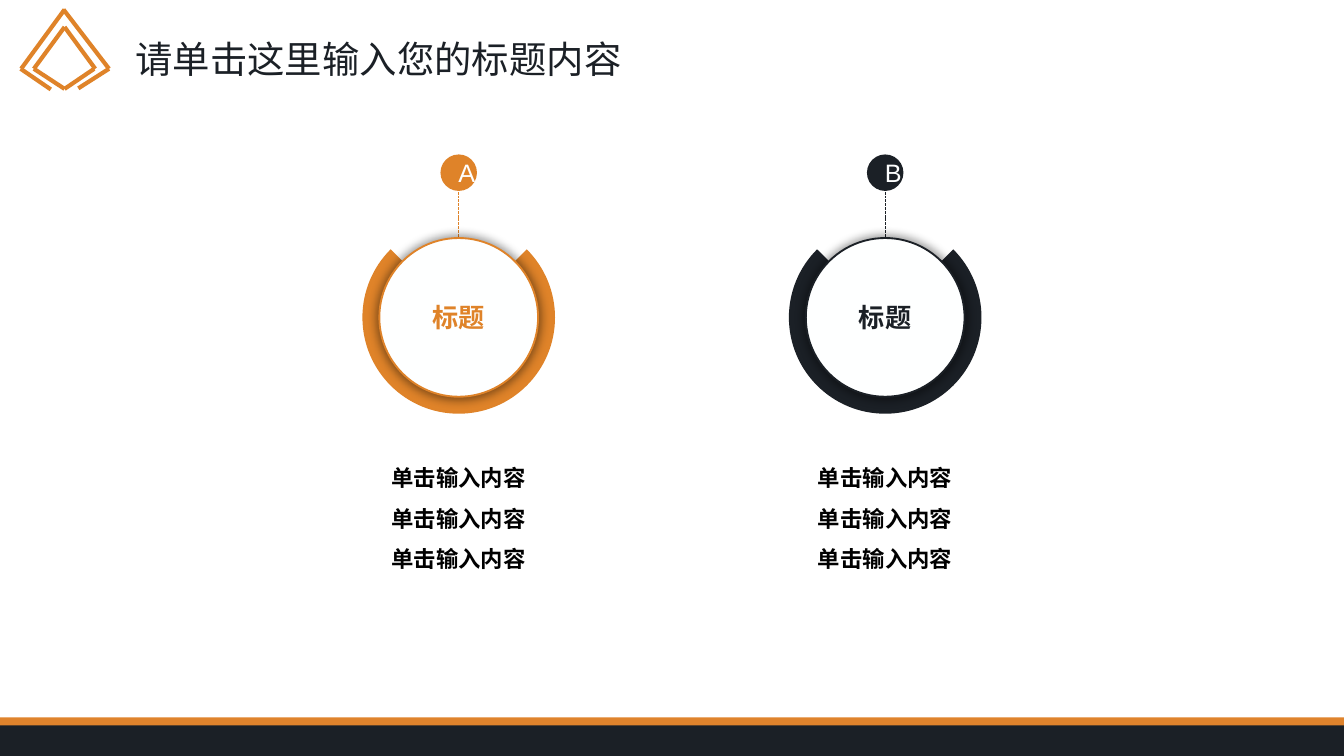
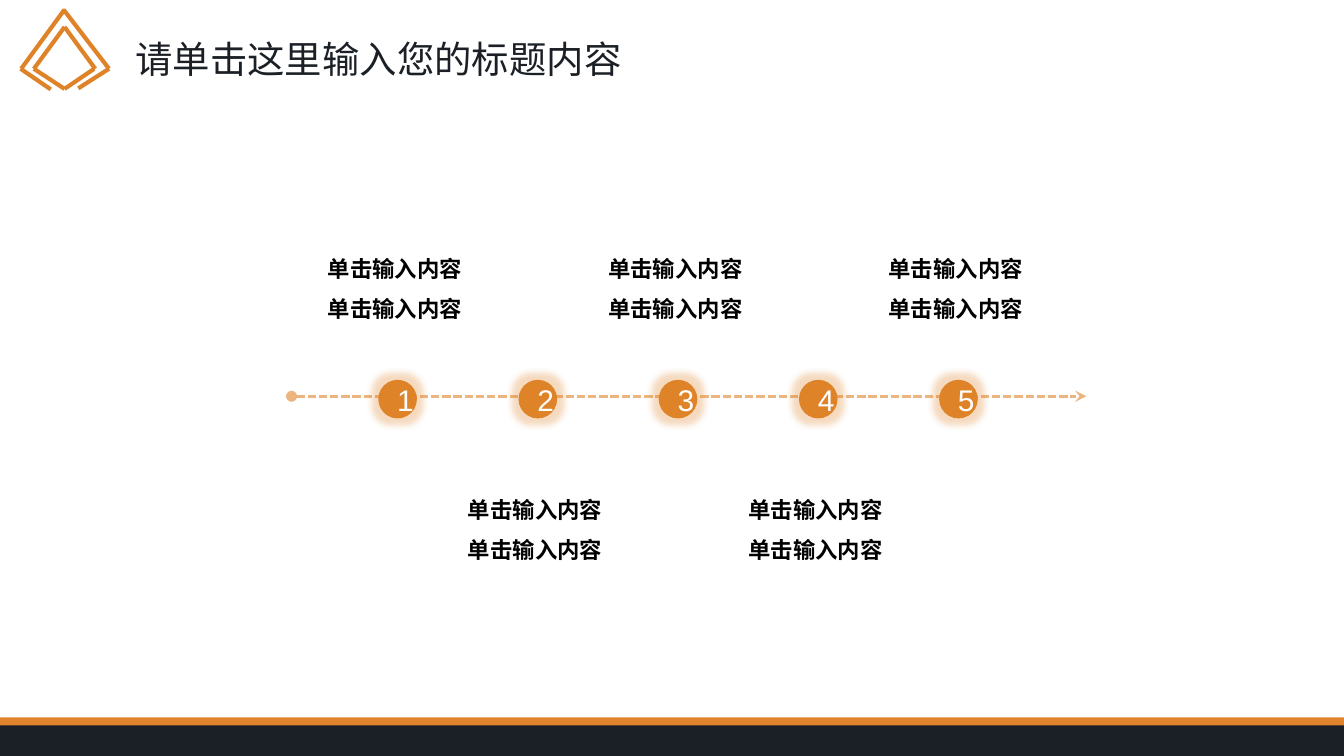
from math import cos, radians, sin, tan

from lxml import etree
from pptx import Presentation
from pptx.dml.color import RGBColor
from pptx.enum.dml import MSO_LINE
from pptx.enum.shapes import MSO_CONNECTOR, MSO_SHAPE
from pptx.enum.text import MSO_ANCHOR, MSO_AUTO_SIZE, PP_ALIGN
from pptx.oxml import parse_xml
from pptx.oxml.ns import nsdecls, qn
from pptx.util import Cm, Pt

SYS_DASH = MSO_LINE.SQUARE_DOT
STRAIGHT = MSO_CONNECTOR.STRAIGHT
RECTANGLE = MSO_SHAPE.RECTANGLE
OVAL = MSO_SHAPE.OVAL
MIDDLE = MSO_ANCHOR.MIDDLE
GROW = MSO_AUTO_SIZE.SHAPE_TO_FIT_TEXT
LEFT, CENTER = PP_ALIGN.LEFT, PP_ALIGN.CENTER

FONT = "Arial"
COLORS = {
    "orange": "DF8329",
    "band": "DF832C",
    "navy": "1B2026",
    "pale": "ECB57F",
    "off_white": "FEFFFF",
    "white": "FFFFFF",
    "black": "000000",
}
RGB = {name: RGBColor.from_string(value) for name, value in COLORS.items()}

TITLE = "请单击这里输入您的标题内容"
ENTRY = "单击输入内容"


def add_line(shapes, start, end, color, width):
    """Draw a shadowless straight line between two points given in cm."""
    line = shapes.add_connector(STRAIGHT, *map(Cm, start + end))
    line.line.color.rgb = RGB[color]
    line.line.width = Pt(width)
    etree.SubElement(line._element.spPr, qn("a:effectLst"))
    return line


def write(shape, lines, size, color, bold=False, align=CENTER, spacing=None):
    """Fill a shape with one paragraph per line."""
    frame = shape.text_frame
    frame.word_wrap = True
    for index, text in enumerate(lines):
        paragraph = frame.add_paragraph() if index else frame.paragraphs[0]
        paragraph.alignment = align
        if spacing:
            paragraph.line_spacing = spacing
        run = paragraph.add_run()
        run.text = text
        run.font.name = FONT
        run.font.size = Pt(size)
        run.font.bold = bold
        run.font.color.rgb = RGB[color]


prs = Presentation()
prs.slide_width, prs.slide_height = Cm(25.4), Cm(14.29)
blank = prs.slide_layouts[6]
comparison, timeline = [prs.slides.add_slide(blank) for _ in range(2)]

# Shared by both slides: footer bands, emblem, title
emblem_lines = [
    ((1.22, 0.51), (0.64, 1.3)),
    ((1.22, 0.51), (1.8, 1.3)),
    ((1.22, 1.68), (0.64, 1.3)),
    ((1.22, 1.68), (1.78, 1.3)),
    ((1.22, 0.18), (0.4, 1.3)),
    ((1.2, 0.18), (2.06, 1.3)),
    ((0.96, 1.69), (0.39, 1.3)),
    ((1.48, 1.67), (2.06, 1.3)),
]
for slide in (comparison, timeline):
    footer = slide.shapes.add_group_shape()
    for top, color in ((13.56, "band"), (13.71, "navy")):
        band = footer.shapes.add_shape(RECTANGLE, 0, Cm(top), Cm(25.4), Cm(0.58))
        band.shadow.inherit = False
        band.fill.solid()
        band.fill.fore_color.rgb = RGB[color]
        band.line.fill.background()
    emblem = slide.shapes.add_group_shape()
    for start, end in emblem_lines:
        add_line(emblem.shapes, start, end, "orange", 2.25)
    title = slide.shapes.add_textbox(Cm(2.31), Cm(0.56), Cm(13.03), Cm(1.11))
    title.text_frame.auto_size = GROW
    write(title, [TITLE], 20, "navy", align=LEFT)

# Slide 1: two labelled rings
shapes = comparison.shapes
ring_y, ring_radius, core_radius = 6, 1.82, 1.5
badge_size = 0.69
ring_angles = [-45, 0, 90, 180, 225]
for letter, center_x, color in (("A", 8.67, "orange"), ("B", 16.73, "navy")):
    stem = add_line(shapes, (center_x, 3.41), (center_x, 4.5), color, 0.5)
    stem.line.dash_style = SYS_DASH

    # Three quarters of a disc, open at the top
    tips = [
        (Cm(center_x + ring_radius * cos(radians(angle))),
         Cm(ring_y + ring_radius * sin(radians(angle))))
        for angle in ring_angles
    ]
    outline = shapes.build_freeform(*tips[0])
    outline.add_line_segments(tips[1:] + [(Cm(center_x), Cm(ring_y))], close=True)
    ring = outline.convert_to_shape()

    # Bend the outer segments into quarter and eighth arcs
    segments = list(ring._element.iter(qn("a:lnTo")))
    for segment, first, last in zip(segments, ring_angles, ring_angles[1:]):
        handle = 4 / 3 * tan(radians(last - first) / 4)
        curve = etree.Element(qn("a:cubicBezTo"))
        for angle, pull in ((first, handle), (last, -handle), (last, 0)):
            turn = radians(angle)
            x = center_x + ring_radius * (cos(turn) - pull * sin(turn))
            y = ring_y + ring_radius * (sin(turn) + pull * cos(turn))
            etree.SubElement(curve, qn("a:pt"),
                             x=str(Cm(x) - ring.left), y=str(Cm(y) - ring.top))
        segment.getparent().replace(segment, curve)

    core = shapes.add_shape(OVAL, Cm(center_x - core_radius), Cm(ring_y - core_radius),
                            Cm(2 * core_radius), Cm(2 * core_radius))
    badge = shapes.add_shape(OVAL, Cm(center_x - badge_size / 2), Cm(2.92),
                             Cm(badge_size), Cm(badge_size))
    for part, fill in ((ring, color), (core, "off_white"), (badge, color)):
        part.shadow.inherit = False
        part.fill.solid()
        part.fill.fore_color.rgb = RGB[fill]
        part.line.fill.background()
    core.line.color.rgb = RGB[color]
    core.line.width = Pt(1)
    core._element.spPr.find(qn("a:effectLst")).append(parse_xml(
        f'<a:outerShdw {nsdecls("a")} blurRad="{Pt(5)}" dist="0" dir="0" '
        'sx="103000" sy="103000" algn="ctr" rotWithShape="0">'
        f'<a:srgbClr val="{COLORS["black"]}"><a:alpha val="40000"/>'
        '</a:srgbClr></a:outerShdw>'))
    for label, text, size, ink, bold in (
        (core, "标题", 14, color, True),
        (badge, letter, 13.5, "off_white", False),
    ):
        label.text_frame.vertical_anchor = MIDDLE
        write(label, [text], size, ink, bold)

    entries = shapes.add_textbox(Cm(center_x - ring_radius), Cm(8.4),
                                 Cm(2 * ring_radius), Cm(3.48))
    write(entries, [ENTRY] * 3, 12, "black", True, spacing=1.5)

# Slide 2: five steps along an arrow, texts alternating above and below
shapes = timeline.shapes
arrow = add_line(shapes, (5.51, 7.49), (20.53, 7.49), "pale", 1.5)
arrow.line.dash_style = SYS_DASH
arrow_ln = arrow._element.spPr.find(qn("a:ln"))
etree.SubElement(arrow_ln, qn("a:headEnd"), type="oval")
etree.SubElement(arrow_ln, qn("a:tailEnd"), type="stealth")

step_gap = 2.65
for index in range(5):
    offset = index * step_gap
    step = shapes.add_shape(OVAL, Cm(7.15 + offset), Cm(7.18), Cm(0.73), Cm(0.73))
    step.shadow.inherit = False
    step.fill.solid()
    step.fill.fore_color.rgb = RGB["orange"]
    step.line.fill.background()
    step._element.spPr.find(qn("a:effectLst")).append(parse_xml(
        f'<a:glow {nsdecls("a")} rad="{Pt(7)}"><a:srgbClr val="{COLORS["orange"]}">'
        '<a:alpha val="30000"/></a:srgbClr></a:glow>'))
    step.text_frame.vertical_anchor = MIDDLE
    write(step, [str(index + 1)], 16, "white")

    top = 8.26 if index % 2 else 3.7
    entries = shapes.add_textbox(Cm(5.6 + offset), Cm(top), Cm(3.73), Cm(3.25))
    frame = entries.text_frame
    frame.margin_left = frame.margin_right = frame.margin_top = frame.margin_bottom = 0
    frame.vertical_anchor = MIDDLE
    write(entries, [ENTRY] * 2, 12, "black", True, spacing=1.5)

prs.save("out.pptx")
